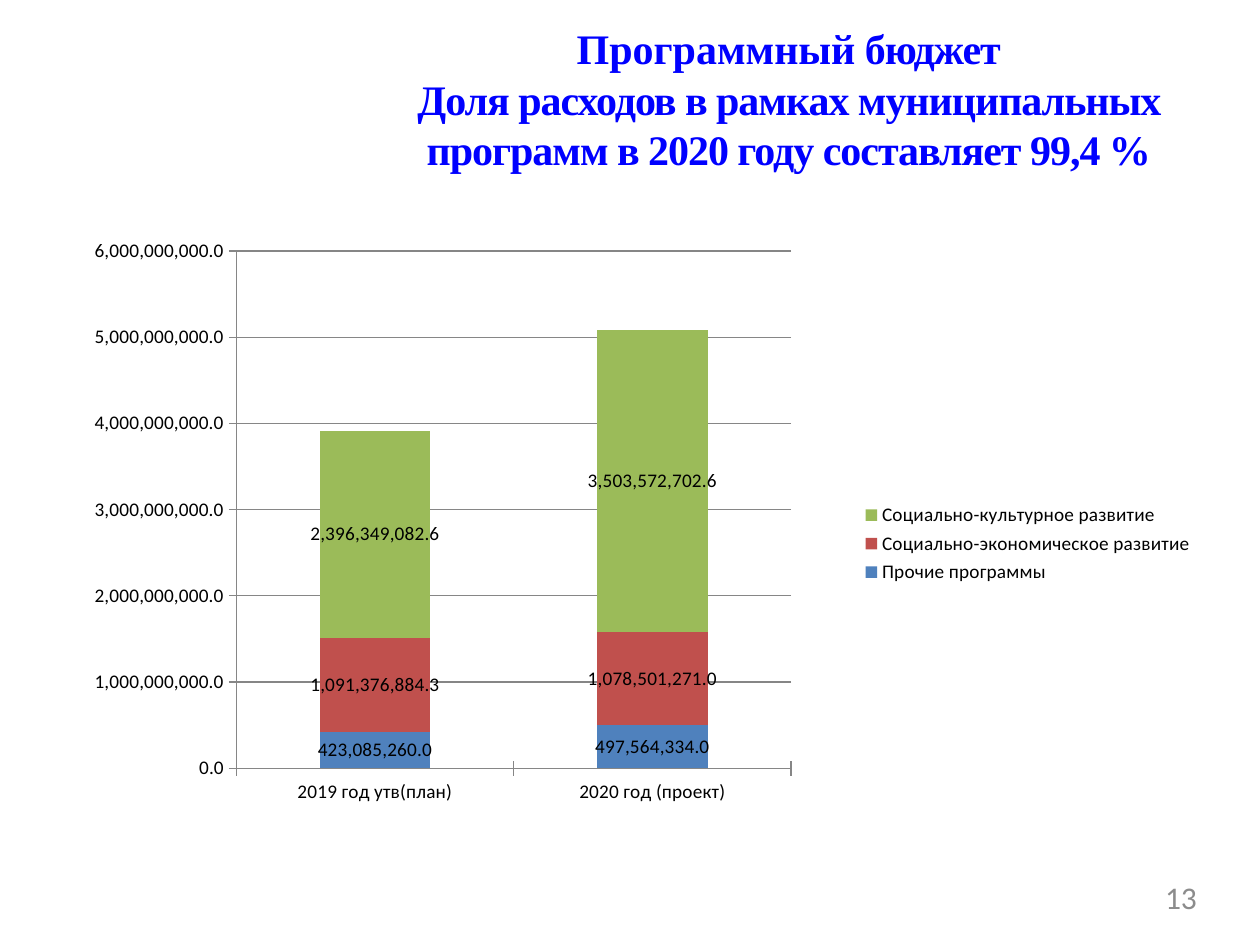
from lxml import etree
from pptx import Presentation
from pptx.chart.data import CategoryChartData
from pptx.dml.color import RGBColor
from pptx.enum.chart import XL_CHART_TYPE as ChartType, XL_LEGEND_POSITION as LegendPos
from pptx.enum.chart import XL_TICK_MARK as Tick
from pptx.enum.text import MSO_AUTO_SIZE as AutoSize, PP_ALIGN as Align
from pptx.oxml.ns import qn
from pptx.util import Inches, Pt

BLUE = RGBColor(0x00, 0x00, 0xFF)
GRAY = RGBColor(0x8C, 0x8C, 0x8C)
AXIS_GRAY = RGBColor(0x86, 0x86, 0x86)
BLACK = RGBColor(0x00, 0x00, 0x00)
NUMBER_FORMAT = "#,##0.0"

YEARS = ["2019 год утв(план)", "2020 год (проект)"]
PROGRAMS = [
    ("Прочие программы", (423085260, 497564334), RGBColor(0x4F, 0x81, 0xBD)),
    ("Социально-экономическое развитие", (1091376884.3, 1078501271),
     RGBColor(0xC0, 0x50, 0x4D)),
    ("Социально-культурное развитие", (2396349082.6, 3503572702.6),
     RGBColor(0x9B, 0xBB, 0x59)),
]


def add_text(slide, box, paragraphs, *, font, size, color, align,
             bold=False, top_inset=0, indent=0):
    """Each paragraph is a list of (text, letter spacing in points)."""
    frame = slide.shapes.add_textbox(*map(Inches, box)).text_frame
    frame.word_wrap = True
    frame.auto_size = AutoSize.SHAPE_TO_FIT_TEXT
    frame.margin_left = frame.margin_right = frame.margin_bottom = 0
    frame.margin_top = Inches(top_inset)
    for number, runs in enumerate(paragraphs):
        paragraph = frame.add_paragraph() if number else frame.paragraphs[0]
        paragraph.alignment = align
        if indent:
            paragraph._p.get_or_add_pPr().set("marL", str(Inches(indent)))
        for text, spacing in runs:
            run = paragraph.add_run()
            run.text = text
            run.font.name, run.font.size, run.font.bold = font, Pt(size), bold
            run.font.color.rgb = color
            if spacing:
                run.font._element.set("spc", str(round(spacing * 100)))


def set_plot_layout(chart, x, y, w, h):
    """Fix the inner plot area as fractions of the chart."""
    plot_area = chart._chartSpace.chart.plotArea
    for old in plot_area.findall(qn("c:layout")):
        plot_area.remove(old)
    layout = etree.Element(qn("c:layout"))
    manual = etree.SubElement(layout, qn("c:manualLayout"))
    settings = {"layoutTarget": "inner", "xMode": "edge", "yMode": "edge",
                "x": x, "y": y, "w": w, "h": h}
    for tag, value in settings.items():
        etree.SubElement(manual, qn(f"c:{tag}")).set("val", str(value))
    plot_area.insert(0, layout)


def add_budget_chart(slide, box):
    budget = CategoryChartData(number_format=NUMBER_FORMAT)
    budget.categories = YEARS
    for name, amounts, _ in PROGRAMS:
        budget.add_series(name, amounts)
    chart = slide.shapes.add_chart(
        ChartType.COLUMN_STACKED, *map(Inches, box), budget).chart
    chart.has_title = False
    chart.font.name, chart.font.size = "Calibri", Pt(11)
    chart.font.color.rgb = BLACK
    set_plot_layout(chart, 0.127, 0.061, 0.499, 0.776)

    # Columns and their values
    columns = chart.plots[0]
    columns.gap_width, columns.overlap = 150, 100
    columns.vary_by_categories = False
    for series, (_, _, color) in zip(columns.series, PROGRAMS):
        series.format.fill.solid()
        series.format.fill.fore_color.rgb = color
        labels = series.data_labels
        labels.show_value = True
        labels.number_format = NUMBER_FORMAT
        labels.number_format_is_linked = False

    # Axes and gridlines
    amounts_axis = chart.value_axis
    amounts_axis.has_major_gridlines = True
    amounts_axis.tick_labels.number_format = NUMBER_FORMAT
    amounts_axis.tick_labels.number_format_is_linked = False
    for axis in (chart.category_axis, amounts_axis):
        axis.major_tick_mark = Tick.CROSS
        axis.format.line.color.rgb = AXIS_GRAY
    amounts_axis.major_gridlines.format.line.color.rgb = AXIS_GRAY

    # Legend
    chart.has_legend = True
    chart.legend.position = LegendPos.RIGHT
    chart.legend.include_in_layout = False


def build_budget_slide(deck):
    slide = deck.slides.add_slide(deck.slide_layouts[6])
    # Heading
    add_text(slide, (1, -0.02, 8.64, 1.41), [
        [("Программный", 0), (" бюджет", -0.6)],
        [("Доля расходов в рамках муниципальных программ "
          "в 2020 году составляет 99,4 %", -0.6)],
    ], font="Times New Roman", size=24, color=BLUE, align=Align.CENTER,
        bold=True, top_inset=0.2, indent=1.88)
    # Page number
    add_text(slide, (7.2, 6.97, 2.3, 0.38), [[("13", 0)]],
             font="Calibri", size=18, color=GRAY, align=Align.RIGHT)
    add_budget_chart(slide, (0.75, 1.67, 8.83, 5.29))


def main():
    deck = Presentation()
    deck.slide_width, deck.slide_height = Inches(10), Inches(7.5)
    build_budget_slide(deck)
    deck.save("out.pptx")


if __name__ == "__main__":
    main()
